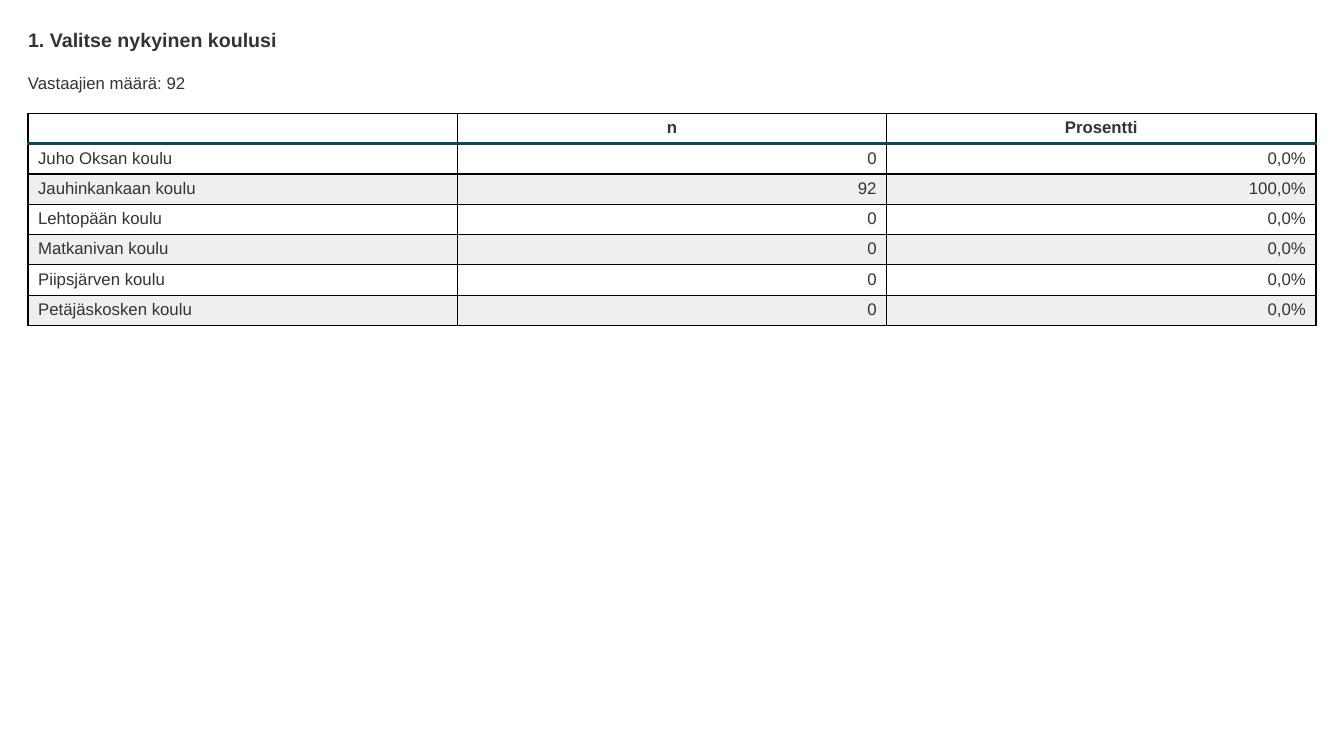
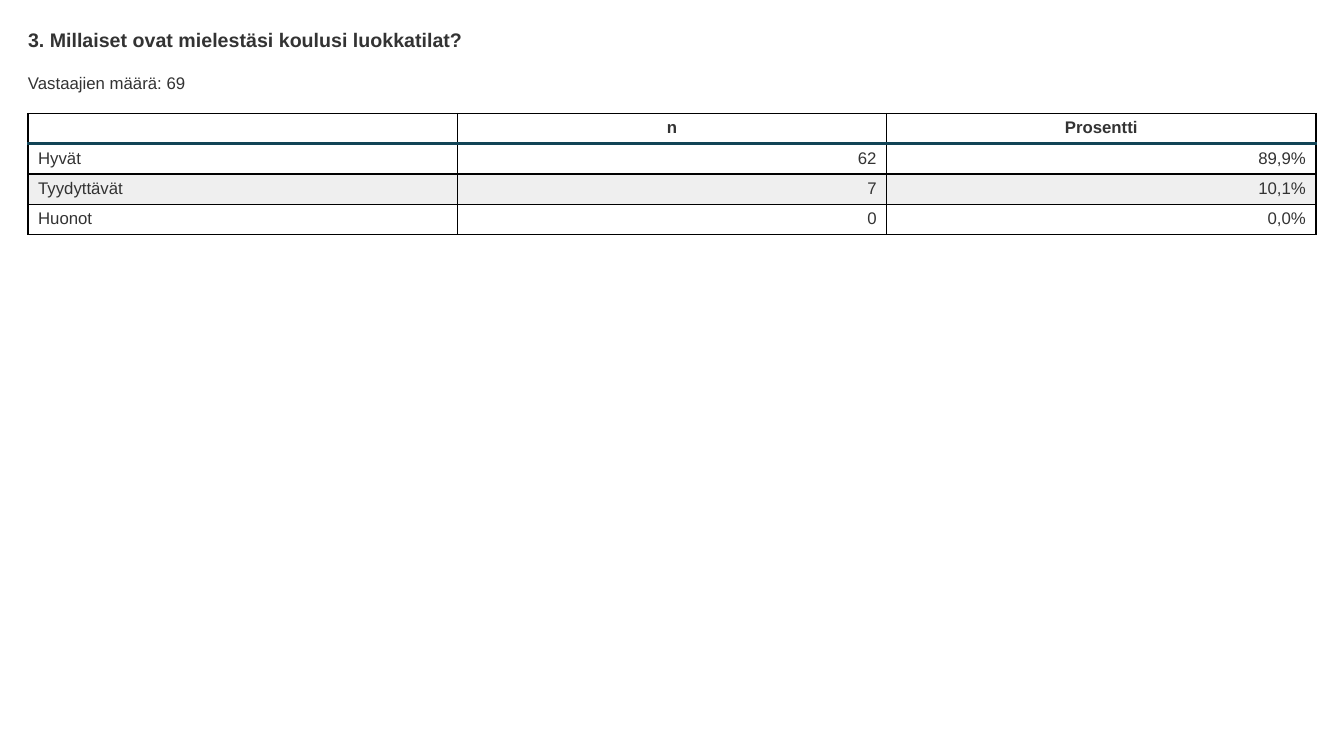
from lxml.etree import SubElement
from pptx import Presentation
from pptx.dml.color import RGBColor
from pptx.enum.text import MSO_ANCHOR, MSO_AUTO_SIZE, PP_ALIGN
from pptx.oxml import parse_xml
from pptx.oxml.ns import nsdecls, qn
from pptx.util import Pt

TEXT = RGBColor(0x33, 0x33, 0x33)
BAND = RGBColor(0xEF, 0xEF, 0xEF)
GRID = RGBColor(0x00, 0x00, 0x00)
HEADER_RULE = RGBColor(0x12, 0x44, 0x56)

MARGIN = Pt(20)
CONTENT_WIDTH = Pt(920)
ROW_HEIGHT = Pt(21.6)
HEADINGS = ("", "n", "Prosentti")

QUESTIONS = [
    ("1. Valitse nykyinen koulusi", 92, [
        ("Juho Oksan koulu", "0", "0,0%"),
        ("Jauhinkankaan koulu", "92", "100,0%"),
        ("Lehtopään koulu", "0", "0,0%"),
        ("Matkanivan koulu", "0", "0,0%"),
        ("Piipsjärven koulu", "0", "0,0%"),
        ("Petäjäskosken koulu", "0", "0,0%"),
    ]),
    ("3. Millaiset ovat mielestäsi koulusi luokkatilat?", 69, [
        ("Hyvät", "62", "89,9%"),
        ("Tyydyttävät", "7", "10,1%"),
        ("Huonot", "0", "0,0%"),
    ]),
]


class SurveyDeck:
    """Holds the shared style and the slide being filled."""

    body_format = {"name": "Arial", "size": Pt(12), "bold": False}
    header_format = {**body_format, "bold": True}
    title_format = {**header_format, "size": Pt(14)}

    def __init__(self):
        self.deck = Presentation()
        self.deck.slide_width, self.deck.slide_height = Pt(960), Pt(540)
        self.title_only = self.deck.slide_layouts.get_by_name("Title Only")
        self.page = None

    def add_page(self):
        self.page = self.deck.slides.add_slide(self.title_only)

    def add_text(self, paragraph, text, font_format, alignment=PP_ALIGN.LEFT):
        paragraph.alignment = alignment
        if not text:
            # The end mark sets the line height of an empty paragraph.
            size = str(int(font_format["size"].pt * 100))
            SubElement(paragraph._p, qn("a:endParaRPr"), sz=size)
            return
        span = paragraph.add_run()
        span.text = text
        for name, value in font_format.items():
            setattr(span.font, name, value)
        span.font.color.rgb = TEXT

    def fill_line(self, box, text, font_format):
        """Set one line of text flush with the edges of the box."""
        frame = box.text_frame
        settings = {"margin_left": 0, "margin_right": 0, "margin_top": 0,
                    "margin_bottom": 0, "word_wrap": True,
                    "vertical_anchor": MSO_ANCHOR.TOP,
                    "auto_size": MSO_AUTO_SIZE.SHAPE_TO_FIT_TEXT}
        for name, value in settings.items():
            setattr(frame, name, value)
        self.add_text(frame.paragraphs[0], text, font_format)

    def add_title(self, text):
        title = self.page.shapes.title
        title.left, title.top = MARGIN, Pt(20)
        title.width, title.height = CONTENT_WIDTH, Pt(16.5)
        self.fill_line(title, text, self.title_format)

    def add_respondent_count(self, count):
        box = self.page.shapes.add_textbox(
            MARGIN, Pt(52), CONTENT_WIDTH, Pt(14.5))
        self.fill_line(box, f"Vastaajien määrä: {count}", self.body_format)

    def set_borders(self, cell, row):
        """Draw the grid, with a heavier rule between header and answers."""
        grid, rule = (GRID, 1), (HEADER_RULE, 2)
        borders = {"lnL": grid, "lnR": grid,
                   "lnT": rule if row == 1 else grid,
                   "lnB": rule if row == 0 else grid}
        properties = cell._tc.get_or_add_tcPr()
        for index, (side, (colour, width)) in enumerate(borders.items()):
            properties.insert(index, parse_xml(
                f'<a:{side} {nsdecls("a")} w="{Pt(width)}"><a:solidFill>'
                f'<a:srgbClr val="{colour}"/></a:solidFill></a:{side}>'))

    def add_answer_table(self, answers):
        rows = [HEADINGS, *answers]
        table = self.page.shapes.add_table(
            len(rows), len(HEADINGS), MARGIN, Pt(81),
            CONTENT_WIDTH, ROW_HEIGHT * len(rows)).table
        table.horz_banding = False
        for row, values in enumerate(rows):
            table.rows[row].height = ROW_HEIGHT
            for column, value in enumerate(values):
                cell = table.cell(row, column)
                if row and row % 2 == 0:
                    cell.fill.solid()
                    cell.fill.fore_color.rgb = BAND
                else:
                    cell.fill.background()
                self.set_borders(cell, row)
                if row == 0:
                    font_format, alignment = self.header_format, PP_ALIGN.CENTER
                else:
                    font_format = self.body_format
                    alignment = PP_ALIGN.RIGHT if column else PP_ALIGN.LEFT
                self.add_text(cell.text_frame.paragraphs[0], value,
                              font_format, alignment)


def main():
    survey = SurveyDeck()
    for title, count, answers in QUESTIONS:
        survey.add_page()
        survey.add_title(title)
        survey.add_respondent_count(count)
        survey.add_answer_table(answers)
    survey.deck.save("out.pptx")


if __name__ == "__main__":
    main()
